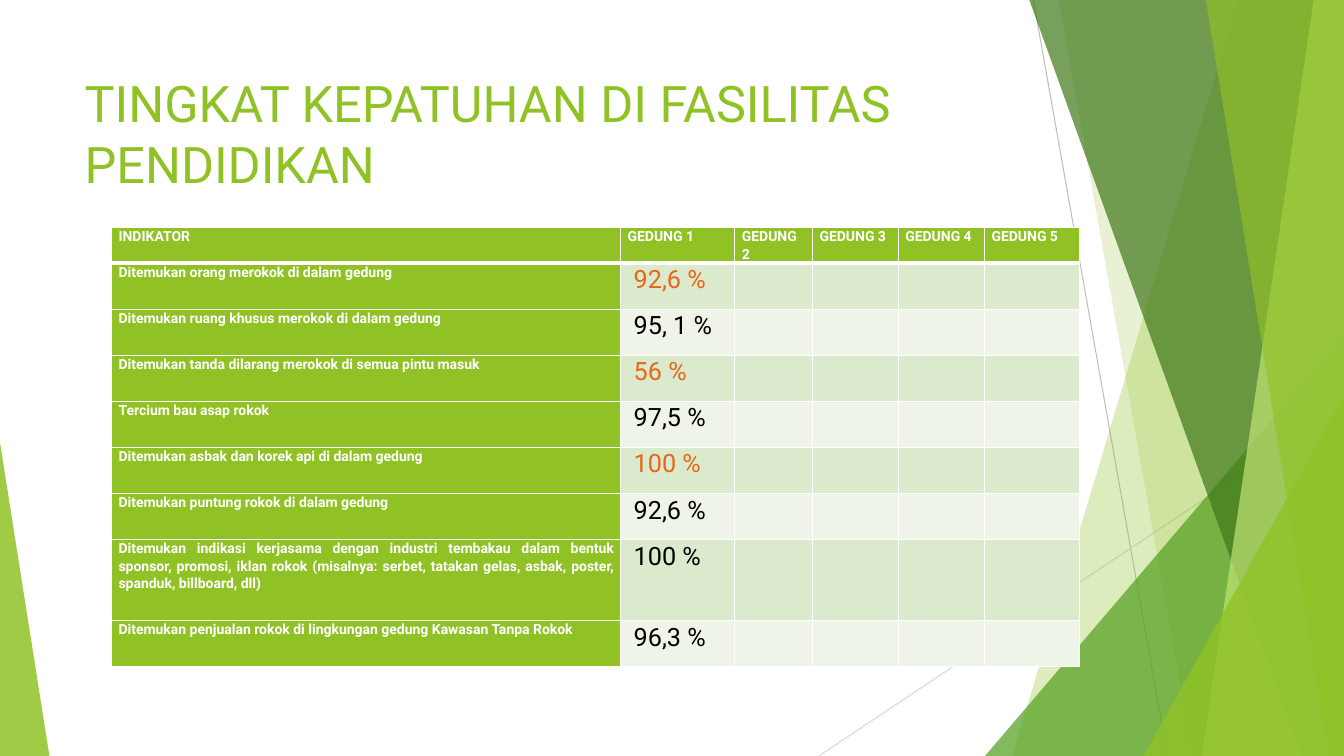
from lxml import etree
from pptx import Presentation
from pptx.dml.color import RGBColor
from pptx.enum.shapes import MSO_CONNECTOR, MSO_SHAPE
from pptx.enum.text import MSO_ANCHOR, PP_ALIGN
from pptx.oxml.ns import qn
from pptx.util import Inches, Pt

STRAIGHT = MSO_CONNECTOR.STRAIGHT
TRIANGLE = MSO_SHAPE.ISOSCELES_TRIANGLE
TOP = MSO_ANCHOR.TOP
LEFT, JUSTIFY = PP_ALIGN.LEFT, PP_ALIGN.JUSTIFY

SLIDE_WIDTH, SLIDE_HEIGHT = Inches(13.33), Inches(7.5)
FONT = "Roboto"

LIME = RGBColor(0x90, 0xC2, 0x26)
GREEN = RGBColor(0x54, 0xA0, 0x21)
FOREST = RGBColor(0x3F, 0x78, 0x19)
PALE_LIME = RGBColor(0xC0, 0xE4, 0x74)
ORANGE = RGBColor(0xE7, 0x66, 0x18)
BLACK = RGBColor(0, 0, 0)
WHITE = RGBColor(0xFF, 0xFF, 0xFF)
GREY = RGBColor(0xBF, 0xBF, 0xBF)
LIGHT_GREY = RGBColor(0xD9, 0xD9, 0xD9)
BANDS = (RGBColor(0xDB, 0xE9, 0xCD), RGBColor(0xEE, 0xF4, 0xE8))

HEADINGS = ["INDIKATOR"] + [f"GEDUNG {number}" for number in range(1, 6)]
INDICATORS = [
    ("Ditemukan orang merokok di dalam gedung", "92,6 %", ORANGE),
    ("Ditemukan ruang khusus merokok di dalam gedung", "95, 1 %", BLACK),
    ("Ditemukan tanda dilarang merokok di semua pintu masuk", "56 %", ORANGE),
    ("Tercium bau asap rokok", "97,5 %", BLACK),
    ("Ditemukan asbak dan korek api di dalam gedung", "100 %", ORANGE),
    ("Ditemukan puntung rokok di dalam gedung", "92,6 %", BLACK),
    ("Ditemukan indikasi kerjasama dengan industri tembakau dalam bentuk "
     "sponsor, promosi, iklan rokok (misalnya: serbet, tatakan gelas, asbak, "
     "poster, spanduk, billboard, dll)", "100 %", BLACK),
    ("Ditemukan penjualan rokok di lingkungan gedung Kawasan Tanpa Rokok",
     "96,3 %", BLACK),
]
# Shares of the slide, in percent
COLUMN_SHARES = [37.88, 8.5, 5.78, 6.38, 6.42, 7.05]
ROW_SHARES = [4.67] + [6.1] * 6 + [10.7, 6.1]


def across(percent):
    return round(SLIDE_WIDTH * percent / 100)


def down(percent):
    return round(SLIDE_HEIGHT * percent / 100)


def paint(shape, colour, opacity):
    """Give a decoration a translucent fill with no line or shadow."""
    shape.shadow.inherit = False
    shape.line.fill.background()
    shape.fill.solid()
    shape.fill.fore_color.rgb = colour
    colour_xml = shape.fill._xPr.find(qn("a:solidFill"))[0]
    etree.SubElement(colour_xml, qn("a:alpha")).set("val", str(opacity * 1000))


def add_hairline(slide, start, end, colour):
    line = slide.shapes.add_connector(
        STRAIGHT, across(start[0]), down(start[1]), across(end[0]), down(end[1]))
    line.line.color.rgb = colour
    line.line.width = Pt(0.75)
    etree.SubElement(line._element.spPr, qn("a:effectLst"))


def add_shard(slide, top_left, bottom_left, colour, opacity):
    """Fill the full-height area from a slanted left edge to the slide's right."""
    outline = slide.shapes.build_freeform(across(top_left), 0)
    outline.add_line_segments([
        (SLIDE_WIDTH, 0), (SLIDE_WIDTH, SLIDE_HEIGHT),
        (across(bottom_left), SLIDE_HEIGHT)], close=True)
    paint(outline.convert_to_shape(), colour, opacity)


def add_corner(slide, left, top, right, apex, colour, opacity):
    """Stand a right triangle on the slide's bottom edge; apex is 0 or 1."""
    corner = slide.shapes.add_shape(
        TRIANGLE, across(left), down(top), across(right - left), down(100 - top))
    corner.adjustments[0] = apex
    paint(corner, colour, opacity)


def add_backdrop(slide):
    add_hairline(slide, (76.89, 0), (86.87, 100), GREY)
    add_hairline(slide, (100, 53.73), (60.92, 100), LIGHT_GREY)
    add_shard(slide, 92.12, 75.32, LIME, 30)
    add_shard(slide, 78.77, 88.75, LIME, 20)
    add_corner(slide, 73.29, 44.4, 100, 1, GREEN, 72)
    add_shard(slide, 76.59, 96.85, FOREST, 70)
    add_shard(slide, 97.75, 89.42, PALE_LIME, 70)
    add_shard(slide, 89.72, 98.87, LIME, 65)
    add_corner(slide, 85.07, 52.4, 100, 1, LIME, 80)
    add_corner(slide, 0, 58.53, 3.68, 0, LIME, 85)


def style_text(paragraph, size, colour, bold=False, align=LEFT):
    paragraph.alignment = align
    for run in paragraph.runs:
        run.font.name = FONT
        run.font.size = Pt(size)
        run.font.bold = bold
        run.font.color.rgb = colour


def set_title(slide, wording):
    title = slide.shapes.title
    title.left, title.top = across(5.55), down(8.93)
    title.width, title.height = across(70.52), down(19.2)
    title.text_frame.text = wording
    title.text_frame.word_wrap = True
    title.text_frame.vertical_anchor = TOP
    style_text(title.text_frame.paragraphs[0], 36, LIME)


def style_cell(cell, fill, top_width=1, bottom_width=1):
    cell.fill.solid()
    cell.fill.fore_color.rgb = fill
    properties = cell._tc.get_or_add_tcPr()
    widths = {"a:lnL": 1, "a:lnR": 1, "a:lnT": top_width, "a:lnB": bottom_width}
    for position, (side, width) in enumerate(widths.items()):
        border = etree.Element(qn(side), w=str(Pt(width)))
        solid = etree.SubElement(border, qn("a:solidFill"))
        etree.SubElement(solid, qn("a:srgbClr")).set("val", str(WHITE))
        properties.insert(position, border)


def write_cell(cell, wording, size, colour, bold=False, align=LEFT, inset=0.07):
    cell.margin_left, cell.margin_right = Inches(inset), Inches(0.07)
    cell.margin_top = cell.margin_bottom = 0
    cell.text_frame.text = wording
    paragraph = cell.text_frame.paragraphs[0]
    paragraph.line_spacing = 1.07
    style_text(paragraph, size, colour, bold, align)


def add_compliance_table(slide):
    table = slide.shapes.add_table(
        len(ROW_SHARES), len(COLUMN_SHARES), across(8.3), down(30.13),
        across(sum(COLUMN_SHARES)), down(sum(ROW_SHARES))).table
    for column, share in zip(table.columns, COLUMN_SHARES):
        column.width = across(share)
    for row, share in zip(table.rows, ROW_SHARES):
        row.height = down(share)

    for column, heading in enumerate(HEADINGS):
        cell = table.cell(0, column)
        style_cell(cell, LIME, bottom_width=3)
        write_cell(cell, heading, 10, WHITE, bold=True)

    for row, (indicator, rate, rate_colour) in enumerate(INDICATORS, start=1):
        for column in range(len(HEADINGS)):
            fill = BANDS[(row - 1) % 2] if column else LIME
            style_cell(table.cell(row, column), fill, top_width=3 if row == 1 else 1)
        write_cell(table.cell(row, 0), indicator, 10, WHITE, bold=True, align=JUSTIFY)
        write_cell(table.cell(row, 1), rate, 18, rate_colour, inset=0.13)


def main():
    deck = Presentation()
    deck.slide_width, deck.slide_height = SLIDE_WIDTH, SLIDE_HEIGHT
    title_only = deck.slide_layouts[5]
    slide = deck.slides.add_slide(title_only)
    add_backdrop(slide)
    set_title(slide, "TINGKAT KEPATUHAN DI FASILITAS PENDIDIKAN")
    add_compliance_table(slide)
    deck.save("out.pptx")


if __name__ == "__main__":
    main()
